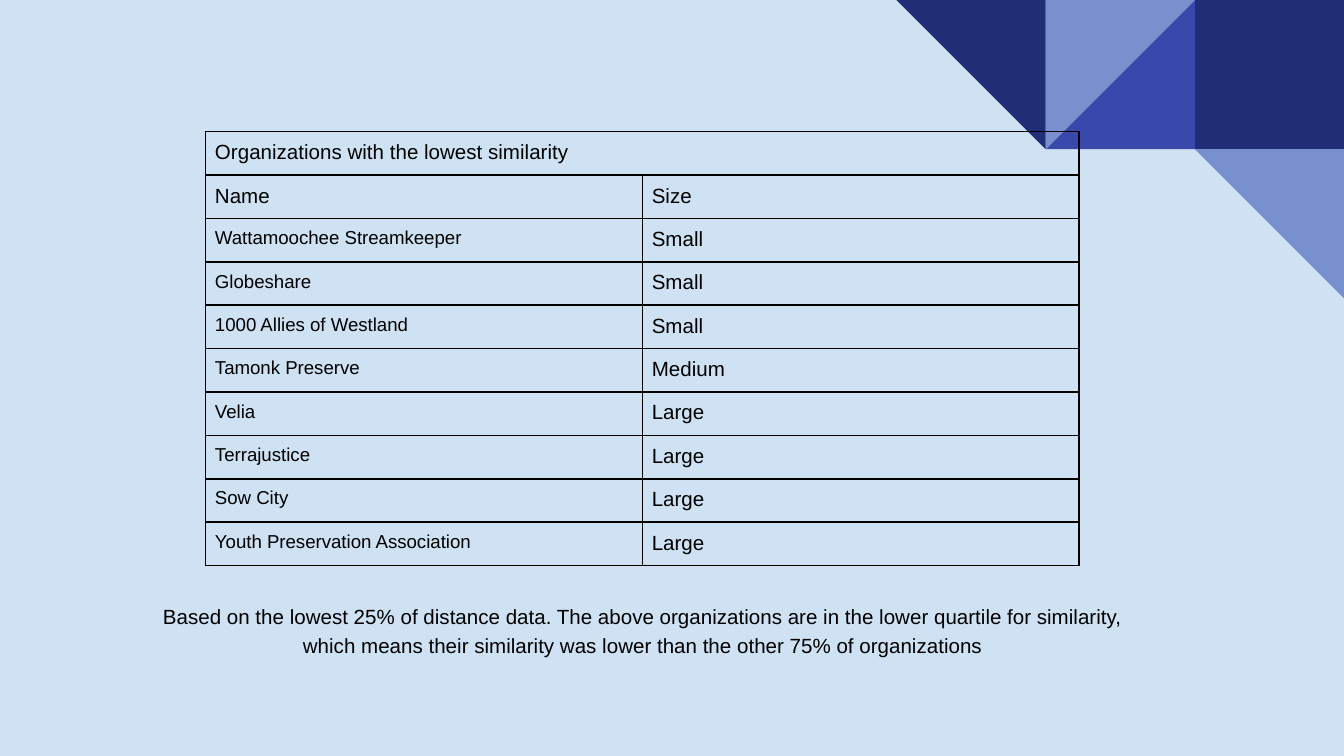
from typing import NamedTuple

import lxml.etree
import pptx
import pptx.dml.color
import pptx.enum.shapes
import pptx.enum.text
import pptx.oxml.ns
import pptx.slide
import pptx.table
import pptx.text.text
import pptx.util

Inches = pptx.util.Inches
Pt = pptx.util.Pt
RGBColor = pptx.dml.color.RGBColor
SHAPES = pptx.enum.shapes.MSO_SHAPE

PALE_BLUE = RGBColor(0xCF, 0xE2, 0xF3)
NAVY = RGBColor(0x21, 0x2D, 0x74)
INDIGO = RGBColor(0x39, 0x49, 0xAB)
PERIWINKLE = RGBColor(0x78, 0x90, 0xCD)
BLACK = RGBColor(0, 0, 0)

SLIDE_WIDTH = 10
SLIDE_HEIGHT = SLIDE_WIDTH * 9 / 16
TILE_SIZE = 1.11
TABLE_WIDTH = 6.5
TABLE_HEIGHT = 3.23
TABLE_TITLE = "Organizations with the lowest similarity"
CAPTION = (
    "Based on the lowest 25% of distance data. The above organizations are in "
    "the lower quartile for similarity, which means their similarity was lower "
    "than the other 75% of organizations"
)


class Tile(NamedTuple):
    columns_from_right: int
    row: int
    kind: pptx.enum.shapes.MSO_SHAPE
    rotation: int
    color: RGBColor


class Organization(NamedTuple):
    name: str
    size: str


TILES = [
    Tile(1, 0, SHAPES.RECTANGLE, 0, NAVY),
    Tile(2, 0, SHAPES.RIGHT_TRIANGLE, 270, INDIGO),
    Tile(2, 0, SHAPES.RIGHT_TRIANGLE, 90, PERIWINKLE),
    Tile(3, 0, SHAPES.RIGHT_TRIANGLE, 180, NAVY),
    Tile(1, 1, SHAPES.RIGHT_TRIANGLE, 180, PERIWINKLE),
]

ORGANIZATIONS = [
    Organization("Wattamoochee Streamkeeper", "Small"),
    Organization("Globeshare", "Small"),
    Organization("1000 Allies of Westland", "Small"),
    Organization("Tamonk Preserve", "Medium"),
    Organization("Velia", "Large"),
    Organization("Terrajustice", "Large"),
    Organization("Sow City", "Large"),
    Organization("Youth Preservation Association", "Large"),
]


def draw_tile(slide: pptx.slide.Slide, tile: Tile) -> None:
    shape = slide.shapes.add_shape(
        tile.kind,
        Inches(SLIDE_WIDTH - tile.columns_from_right * TILE_SIZE),
        Inches(tile.row * TILE_SIZE),
        Inches(TILE_SIZE),
        Inches(TILE_SIZE),
    )
    shape.rotation = tile.rotation
    shape.shadow.inherit = False
    shape.fill.solid()
    shape.fill.fore_color.rgb = tile.color
    shape.line.fill.background()


def write_text(paragraph: pptx.text.text._Paragraph, text: str, size: int) -> None:
    paragraph.text = text
    paragraph.font.name = "Arial"
    paragraph.font.size = Pt(size)
    paragraph.font.color.rgb = BLACK


def style_cell(cell: pptx.table._Cell) -> None:
    cell.margin_left = cell.margin_right = Inches(0.07)
    cell.margin_top = cell.margin_bottom = Inches(0.07)
    properties = cell._tc.get_or_add_tcPr()
    qn = pptx.oxml.ns.qn
    for side in ("a:lnL", "a:lnR", "a:lnT", "a:lnB"):
        border = lxml.etree.SubElement(properties, qn(side), w=str(Pt(1)))
        fill = lxml.etree.SubElement(border, qn("a:solidFill"))
        lxml.etree.SubElement(fill, qn("a:srgbClr"), val=str(BLACK))
    cell.fill.background()


def draw_table(slide: pptx.slide.Slide) -> None:
    table = slide.shapes.add_table(
        len(ORGANIZATIONS) + 2,
        2,
        Inches(1.53),
        Inches(0.98),
        Inches(TABLE_WIDTH),
        Inches(TABLE_HEIGHT),
    ).table
    table.first_row = False
    table.horz_banding = False
    for cell in table.iter_cells():
        style_cell(cell)
    table.cell(0, 0).merge(table.cell(0, 1))
    write_text(table.cell(0, 0).text_frame.paragraphs[0], TABLE_TITLE, 11)
    for row, organization in enumerate([Organization("Name", "Size"), *ORGANIZATIONS], 1):
        name_size = 11 if row == 1 else 10
        write_text(table.cell(row, 0).text_frame.paragraphs[0], organization.name, name_size)
        write_text(table.cell(row, 1).text_frame.paragraphs[0], organization.size, 11)


def draw_caption(slide: pptx.slide.Slide) -> None:
    caption = slide.shapes.add_textbox(Inches(1.1), Inches(4.34), Inches(7.37), Inches(0.68))
    frame = caption.text_frame
    frame.word_wrap = True
    frame.vertical_anchor = pptx.enum.text.MSO_ANCHOR.MIDDLE
    frame.margin_left = frame.margin_right = Inches(0.1)
    frame.margin_top = frame.margin_bottom = Inches(0.1)
    paragraph = frame.paragraphs[0]
    write_text(paragraph, CAPTION, 11)
    paragraph.alignment = pptx.enum.text.PP_ALIGN.CENTER
    paragraph.line_spacing = 1.15


def main() -> None:
    presentation = pptx.Presentation()
    presentation.slide_width = Inches(SLIDE_WIDTH)
    presentation.slide_height = Inches(SLIDE_HEIGHT)
    slide = presentation.slides.add_slide(presentation.slide_layouts[6])
    slide.background.fill.solid()
    slide.background.fill.fore_color.rgb = PALE_BLUE
    for tile in TILES:
        draw_tile(slide, tile)
    draw_table(slide)
    draw_caption(slide)
    presentation.save("out.pptx")


if __name__ == "__main__":
    main()
